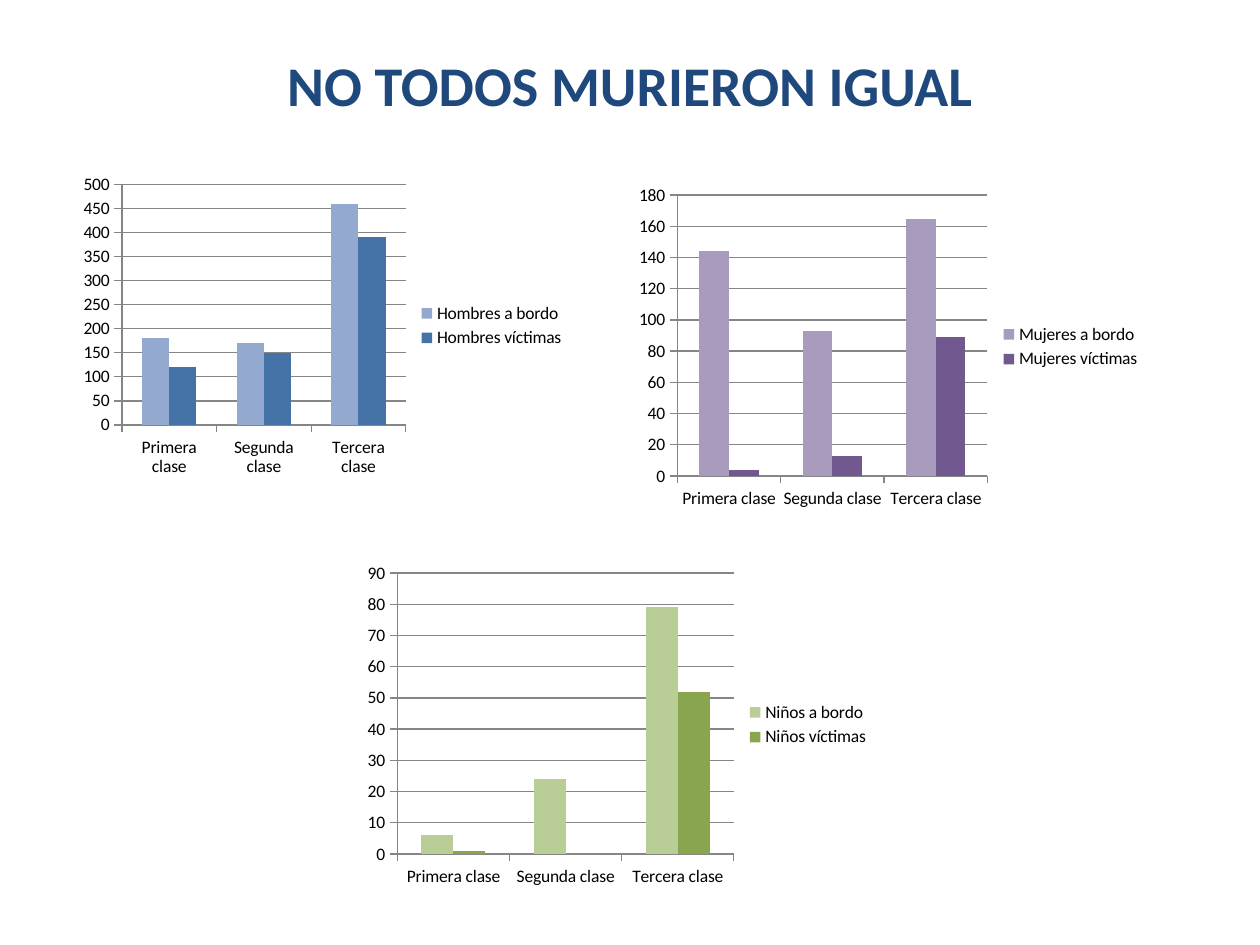
from pptx import Presentation
from pptx.chart.data import CategoryChartData
from pptx.dml.color import RGBColor
from pptx.enum.chart import XL_CHART_TYPE, XL_LEGEND_POSITION, XL_TICK_MARK
from pptx.enum.text import MSO_ANCHOR, PP_ALIGN
from pptx.util import Cm, Pt

COLUMNS = XL_CHART_TYPE.COLUMN_CLUSTERED
RIGHT = XL_LEGEND_POSITION.RIGHT
OUTSIDE = XL_TICK_MARK.OUTSIDE
MIDDLE = MSO_ANCHOR.MIDDLE
CENTER = PP_ALIGN.CENTER

FONT = "Calibri"
COLORS = {
    "title": "1F497D",
    "text": "000000",
    "axis": "868686",
    "men_aboard": "93A9CF",
    "men_victims": "4572A7",
    "women_aboard": "A99BBD",
    "women_victims": "71588F",
    "children_aboard": "B9CD96",
    "children_victims": "89A54E",
}

TITLE = "NO TODOS MURIERON IGUAL"
CLASSES = ["Primera clase", "Segunda clase", "Tercera clase"]
GROUPS = [
    {
        "box": (12.67, 3.6, 10.58, 6.78),
        "series": [
            ("Mujeres a bordo", (144, 93, 165), "women_aboard"),
            ("Mujeres víctimas", (4, 13, 89), "women_victims"),
        ],
    },
    {
        "box": (7.2, 11.22, 10.58, 6.78),
        "series": [
            ("Niños a bordo", (6, 24, 79), "children_aboard"),
            ("Niños víctimas", (1, 0, 52), "children_victims"),
        ],
    },
    {
        "box": (1.48, 3.39, 10.16, 6.35),
        "series": [
            ("Hombres a bordo", (180, 170, 460), "men_aboard"),
            ("Hombres víctimas", (120, 150, 390), "men_victims"),
        ],
    },
]


def color(name):
    return RGBColor.from_string(COLORS[name])


def style_line(line):
    line.color.rgb = color("axis")
    line.width = Pt(0.75)


def add_group(slide, group):
    data = CategoryChartData()
    data.categories = CLASSES
    for name, counts, _ in group["series"]:
        data.add_series(name, counts)
    box = [Cm(length) for length in group["box"]]
    chart = slide.shapes.add_chart(COLUMNS, *box, data).chart
    chart.has_title = False
    chart.font.name = FONT
    chart.font.size = Pt(10)
    chart.font.color.rgb = color("text")

    chart.has_legend = True
    chart.legend.position = RIGHT
    chart.legend.include_in_layout = False

    for axis in (chart.category_axis, chart.value_axis):
        axis.major_tick_mark = OUTSIDE
        style_line(axis.format.line)
    chart.value_axis.has_major_gridlines = True
    style_line(chart.value_axis.major_gridlines.format.line)

    columns = chart.plots[0]
    columns.gap_width = 150
    columns.overlap = 0
    columns.vary_by_categories = False
    for series, (_, _, fill_name) in zip(columns.series, group["series"]):
        series.format.fill.solid()
        series.format.fill.fore_color.rgb = color(fill_name)


def add_title(slide):
    heading = slide.shapes.add_textbox(Cm(1.27), Cm(0.64), Cm(22.86), Cm(2.11))
    frame = heading.text_frame
    frame.word_wrap = True
    frame.vertical_anchor = MIDDLE
    frame.text = TITLE
    paragraph = frame.paragraphs[0]
    paragraph.alignment = CENTER
    font = paragraph.runs[0].font
    font.name = FONT
    font.size = Pt(32)
    font.bold = True
    font.color.rgb = color("title")


def main():
    presentation = Presentation()
    presentation.slide_width = Cm(25.4)
    presentation.slide_height = Cm(19.05)
    slide = presentation.slides.add_slide(presentation.slide_layouts[6])
    for group in GROUPS:
        add_group(slide, group)
    add_title(slide)
    presentation.save("out.pptx")


if __name__ == "__main__":
    main()
